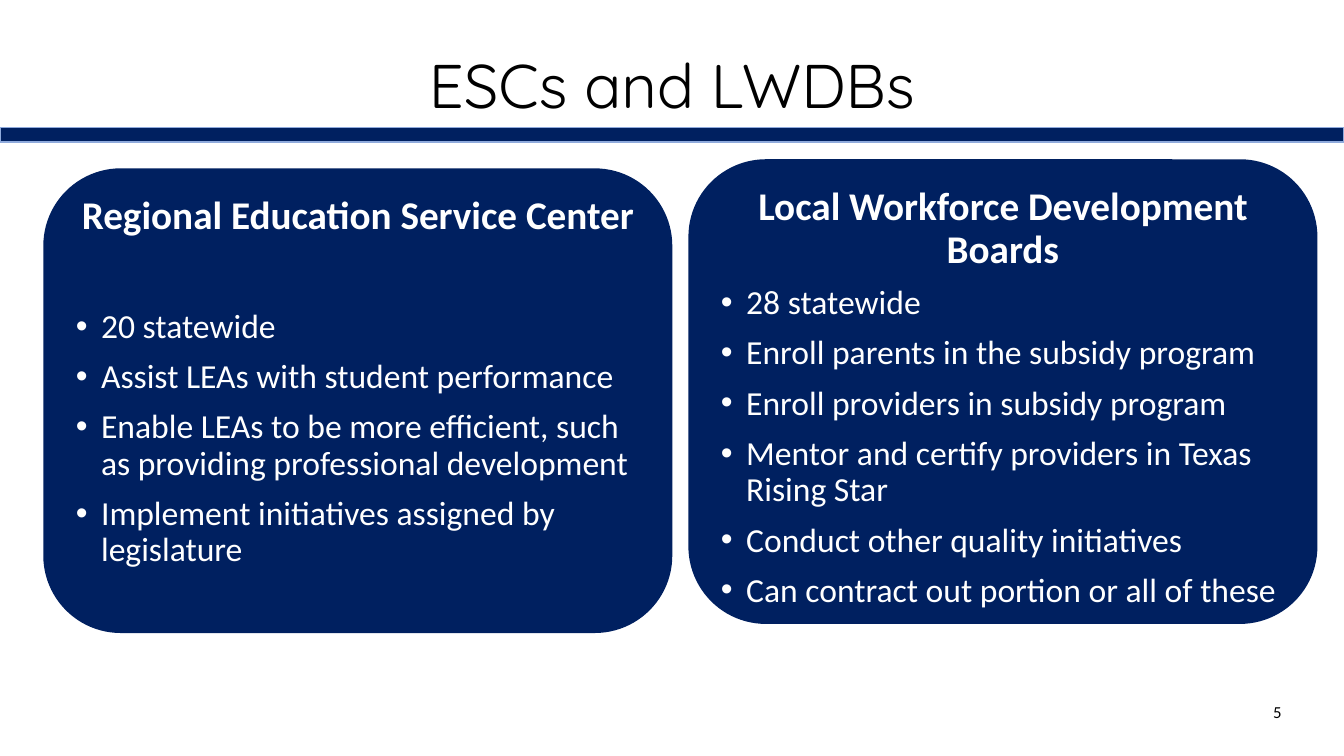
from lxml import etree
from pptx import Presentation
from pptx.dml.color import RGBColor
from pptx.enum.shapes import MSO_SHAPE
from pptx.enum.text import MSO_ANCHOR, PP_ALIGN
from pptx.oxml.ns import qn
from pptx.util import Pt

RECTANGLE = MSO_SHAPE.RECTANGLE
ROUNDED_RECTANGLE = MSO_SHAPE.ROUNDED_RECTANGLE
MIDDLE, TOP = MSO_ANCHOR.MIDDLE, MSO_ANCHOR.TOP
LEFT, CENTER, RIGHT = PP_ALIGN.LEFT, PP_ALIGN.CENTER, PP_ALIGN.RIGHT

NAVY = RGBColor(0x00, 0x20, 0x60)
LIGHT_BLUE = RGBColor(0x8F, 0xAA, 0xDC)
WHITE = RGBColor(0xFF, 0xFF, 0xFF)
BLACK = RGBColor(0x00, 0x00, 0x00)

TITLE_FONT, BODY_FONT = "Quicksand", "Calibri"
SLIDE_WIDTH, SLIDE_HEIGHT = 960, 540
CARD_WIDTH, CARD_HEIGHT = 449.28, 331.92
TITLE_ONLY_LAYOUT = 5

# Heading, space after the heading, left, top, bullets
CARDS = [
    ("Regional Education Service Center", 40.7, 30.96, 120.24, [
        "20 statewide",
        "Assist LEAs with student performance",
        "Enable LEAs to be more efficient, such as providing professional development",
        "Implement initiatives assigned by legislature",
    ]),
    ("Local Workforce Development Boards", 0, 491.76, 113.76, [
        "28 statewide",
        "Enroll parents in the subsidy program",
        "Enroll providers in subsidy program",
        "Mentor and certify providers in Texas Rising Star",
        "Conduct other quality initiatives",
        "Can contract out portion or all of these",
    ]),
]


def write(paragraph, text, size, color, align, font=BODY_FONT, bold=False):
    paragraph.text = text
    paragraph.alignment = align
    paragraph.font.name = font
    paragraph.font.size = Pt(size)
    paragraph.font.bold = bold
    paragraph.font.color.rgb = color


def add_bullet(paragraph):
    properties = paragraph._p.get_or_add_pPr()
    properties.set("marL", str(Pt(18)))
    properties.set("indent", str(Pt(-18)))
    etree.SubElement(properties, qn("a:buFont")).set("typeface", "Arial")
    etree.SubElement(properties, qn("a:buChar")).set("char", "•")
    # The schema wants default run properties after the bullet.
    run_defaults = properties.find(qn("a:defRPr"))
    if run_defaults is not None:
        properties.append(run_defaults)


def add_navy_shape(slide, kind, left, top, width, height):
    shape = slide.shapes.add_shape(kind, Pt(left), Pt(top), Pt(width), Pt(height))
    shape.shadow.inherit = False
    shape.fill.solid()
    shape.fill.fore_color.rgb = NAVY
    shape.line.fill.background()
    return shape


def format_title(slide, text):
    title = slide.shapes.title
    title.left, title.top = Pt(66), Pt(10.8)
    title.width, title.height = Pt(828), Pt(104.4)
    frame = title.text_frame
    frame.vertical_anchor = MIDDLE
    paragraph = frame.paragraphs[0]
    write(paragraph, text, 44, BLACK, CENTER, TITLE_FONT)
    paragraph.line_spacing = 0.9


def add_slide_number(slide, number):
    box = slide.shapes.add_textbox(Pt(706.5), Pt(493.9), Pt(216), Pt(28.8))
    frame = box.text_frame
    frame.word_wrap = True
    frame.vertical_anchor = MIDDLE
    write(frame.paragraphs[0], number, 12, BLACK, RIGHT)


def add_title_rule(slide):
    rule = add_navy_shape(slide, RECTANGLE, 0, 90.9, SLIDE_WIDTH, 10.6)
    rule.line.color.rgb = LIGHT_BLUE
    rule.line.width = Pt(1)


def add_card(slide, heading, heading_gap, left, top, bullets):
    card = add_navy_shape(slide, ROUNDED_RECTANGLE, left, top, CARD_WIDTH, CARD_HEIGHT)
    frame = card.text_frame
    frame.word_wrap = True
    frame.vertical_anchor = TOP
    title = frame.paragraphs[0]
    write(title, heading, 28, WHITE, CENTER, bold=True)
    title.space_after = Pt(heading_gap)
    for bullet in bullets:
        paragraph = frame.add_paragraph()
        write(paragraph, bullet, 24, WHITE, LEFT)
    for paragraph in frame.paragraphs:
        paragraph.line_spacing = 0.9
        paragraph.space_before = Pt(10)
    for paragraph in frame.paragraphs[1:]:
        add_bullet(paragraph)


def main():
    presentation = Presentation()
    presentation.slide_width = Pt(SLIDE_WIDTH)
    presentation.slide_height = Pt(SLIDE_HEIGHT)
    slide = presentation.slides.add_slide(presentation.slide_layouts[TITLE_ONLY_LAYOUT])
    format_title(slide, "ESCs and LWDBs")
    add_slide_number(slide, "5")
    add_title_rule(slide)
    for card in CARDS:
        add_card(slide, *card)
    presentation.save("out.pptx")


if __name__ == "__main__":
    main()
